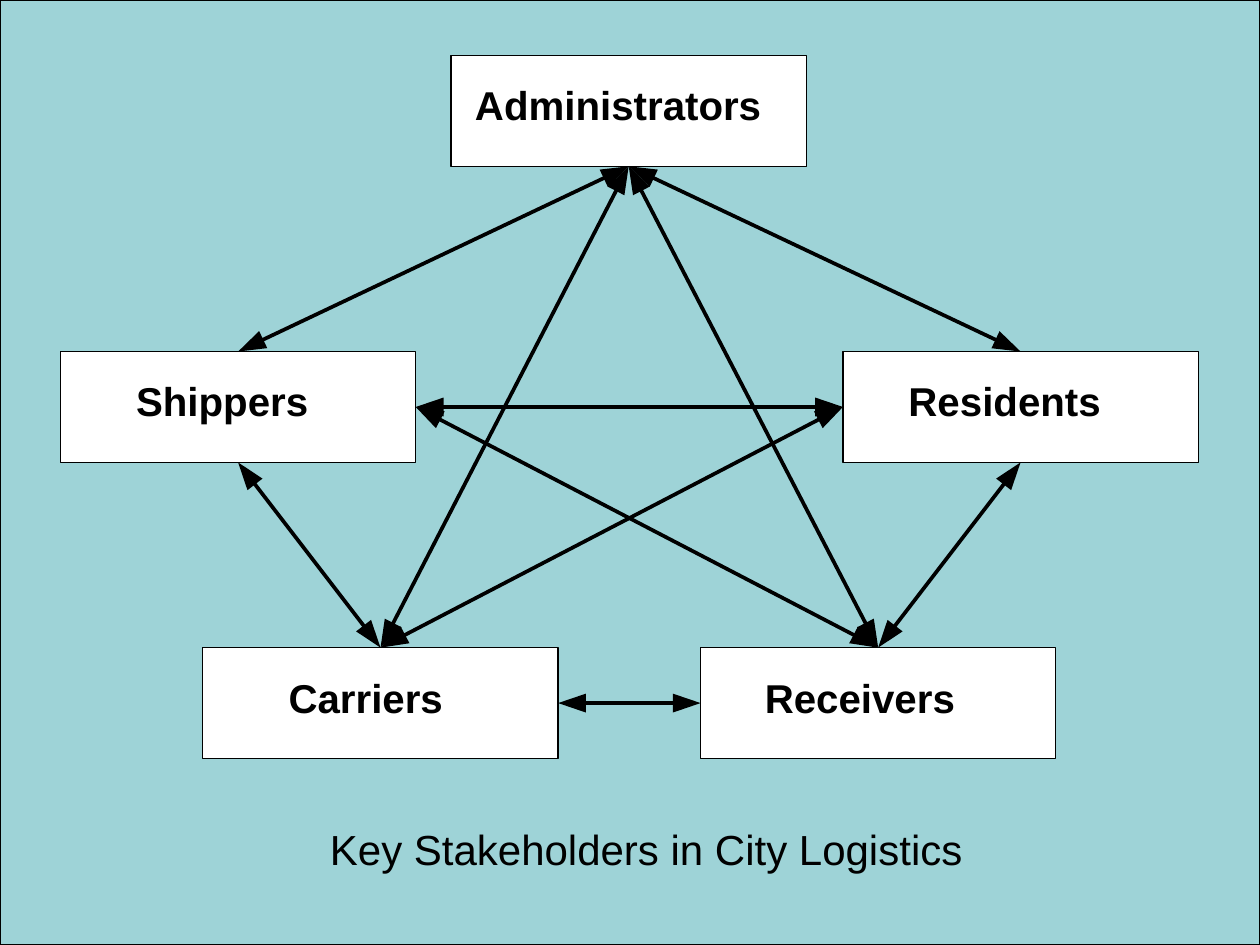
from math import hypot

from lxml import etree
from pptx import Presentation
from pptx.dml.color import RGBColor
from pptx.enum.shapes import MSO_CONNECTOR, MSO_SHAPE
from pptx.enum.text import MSO_AUTO_SIZE
from pptx.oxml.ns import qn
from pptx.util import Inches, Pt

RECTANGLE = MSO_SHAPE.RECTANGLE
STRAIGHT = MSO_CONNECTOR.STRAIGHT
GROW = MSO_AUTO_SIZE.SHAPE_TO_FIT_TEXT

BLACK, WHITE, TEAL = "000000", "FFFFFF", "9ED3D7"
BOX_WIDTH, BOX_HEIGHT = 2.82, 0.88
LABEL_DROP = 0.2
HEAD_LENGTH, HEAD_HALF_WIDTH, LINE_INSET = 0.22, 0.075, 0.2

# name: box left, box top, label left, label width, label height
STAKEHOLDERS = {
    "Carriers": (1.61, 5.14, 2.29, 1.63, 0.54),
    "Shippers": (0.48, 2.79, 1.08, 1.79, 0.54),
    "Residents": (6.69, 2.79, 7.21, 1.79, 0.47),
    "Administrators": (3.58, 0.44, 3.77, 2.86, 0.54),
    "Receivers": (5.56, 5.14, 6.07, 1.77, 0.47),
}
SIDES = {"top": (0.5, 0), "bottom": (0.5, 1), "left": (0, 0.5), "right": (1, 0.5)}
RELATIONS = [
    ("Carriers", "right", "Receivers", "left"),
    ("Carriers", "top", "Shippers", "bottom"),
    ("Receivers", "top", "Residents", "bottom"),
    ("Shippers", "right", "Receivers", "top"),
    ("Shippers", "top", "Administrators", "bottom"),
    ("Administrators", "bottom", "Residents", "top"),
    ("Shippers", "right", "Residents", "left"),
    ("Carriers", "top", "Residents", "left"),
    ("Administrators", "bottom", "Carriers", "top"),
    ("Administrators", "bottom", "Receivers", "top"),
]


def color(value):
    """Return the colour for a hex string."""
    return RGBColor.from_string(value)


def add_rectangle(slide, left, top, width, height, fill):
    """Draw a filled rectangle with a thin black outline."""
    shape = slide.shapes.add_shape(
        RECTANGLE, Inches(left), Inches(top), Inches(width), Inches(height))
    shape.shadow.inherit = False
    shape.fill.solid()
    shape.fill.fore_color.rgb = color(fill)
    shape.line.color.rgb = color(BLACK)
    shape.line.width = Pt(0.75)


def add_text(slide, text, left, top, width, height, size, bold=False, margins=True):
    """Place one unwrapped line of black text."""
    box = slide.shapes.add_textbox(
        Inches(left), Inches(top), Inches(width), Inches(height))
    frame = box.text_frame
    frame.word_wrap = False
    frame.auto_size = GROW
    if not margins:
        frame.margin_left = frame.margin_top = 0
        frame.margin_right = frame.margin_bottom = 0
    paragraph = frame.paragraphs[0]
    paragraph.text = text
    paragraph.font.name = "Arial"
    paragraph.font.size = Pt(size)
    paragraph.font.bold = bold
    paragraph.font.color.rgb = color(BLACK)


def add_stakeholder(slide, name):
    """Draw a stakeholder box and its label."""
    left, top, label_left, label_width, label_height = STAKEHOLDERS[name]
    add_rectangle(slide, left, top, BOX_WIDTH, BOX_HEIGHT, WHITE)
    add_text(slide, name, label_left, top + LABEL_DROP, label_width, label_height,
             23, bold=True, margins=False)


def anchor(name, side):
    """Return the middle point of one side of a stakeholder box."""
    left, top = STAKEHOLDERS[name][:2]
    across, down = SIDES[side]
    return left + across * BOX_WIDTH, top + down * BOX_HEIGHT


def add_arrowhead(slide, tip, direction):
    """Draw a triangle whose tip points along the unit direction."""
    (x, y), (dx, dy) = tip, direction
    base_x, base_y = x - HEAD_LENGTH * dx, y - HEAD_LENGTH * dy
    side_x, side_y = -HEAD_HALF_WIDTH * dy, HEAD_HALF_WIDTH * dx
    builder = slide.shapes.build_freeform(
        Inches(base_x + side_x), Inches(base_y + side_y))
    builder.add_line_segments(
        [(Inches(x), Inches(y)), (Inches(base_x - side_x), Inches(base_y - side_y))])
    shape = builder.convert_to_shape()
    shape.shadow.inherit = False
    shape.fill.solid()
    shape.fill.fore_color.rgb = color(BLACK)
    shape.line.fill.background()


def add_double_arrow(slide, start, end):
    """Join two points by a line with an arrowhead at each end."""
    (x1, y1), (x2, y2) = start, end
    length = hypot(x2 - x1, y2 - y1)
    dx, dy = (x2 - x1) / length, (y2 - y1) / length
    inset_x, inset_y = LINE_INSET * dx, LINE_INSET * dy
    connector = slide.shapes.add_connector(
        STRAIGHT, Inches(x1 + inset_x), Inches(y1 + inset_y),
        Inches(x2 - inset_x), Inches(y2 - inset_y))
    connector.line.color.rgb = color(BLACK)
    connector.line.width = Pt(2.13)
    etree.SubElement(connector.element.spPr, qn("a:effectLst"))
    add_arrowhead(slide, start, (-dx, -dy))
    add_arrowhead(slide, end, (dx, dy))


def main():
    """Build the stakeholder diagram and save it."""
    presentation = Presentation()
    presentation.slide_width, presentation.slide_height = Inches(10), Inches(7.5)
    slide = presentation.slides.add_slide(presentation.slide_layouts[6])
    add_rectangle(slide, 0, 0, 10, 7.5, TEAL)
    add_text(slide, "Key Stakeholders in City Logistics", 2.52, 6.49, 5.28, 0.5, 24)
    for name in STAKEHOLDERS:
        add_stakeholder(slide, name)
    for source, source_side, target, target_side in RELATIONS:
        add_double_arrow(slide, anchor(source, source_side), anchor(target, target_side))
    presentation.save("out.pptx")


if __name__ == "__main__":
    main()
